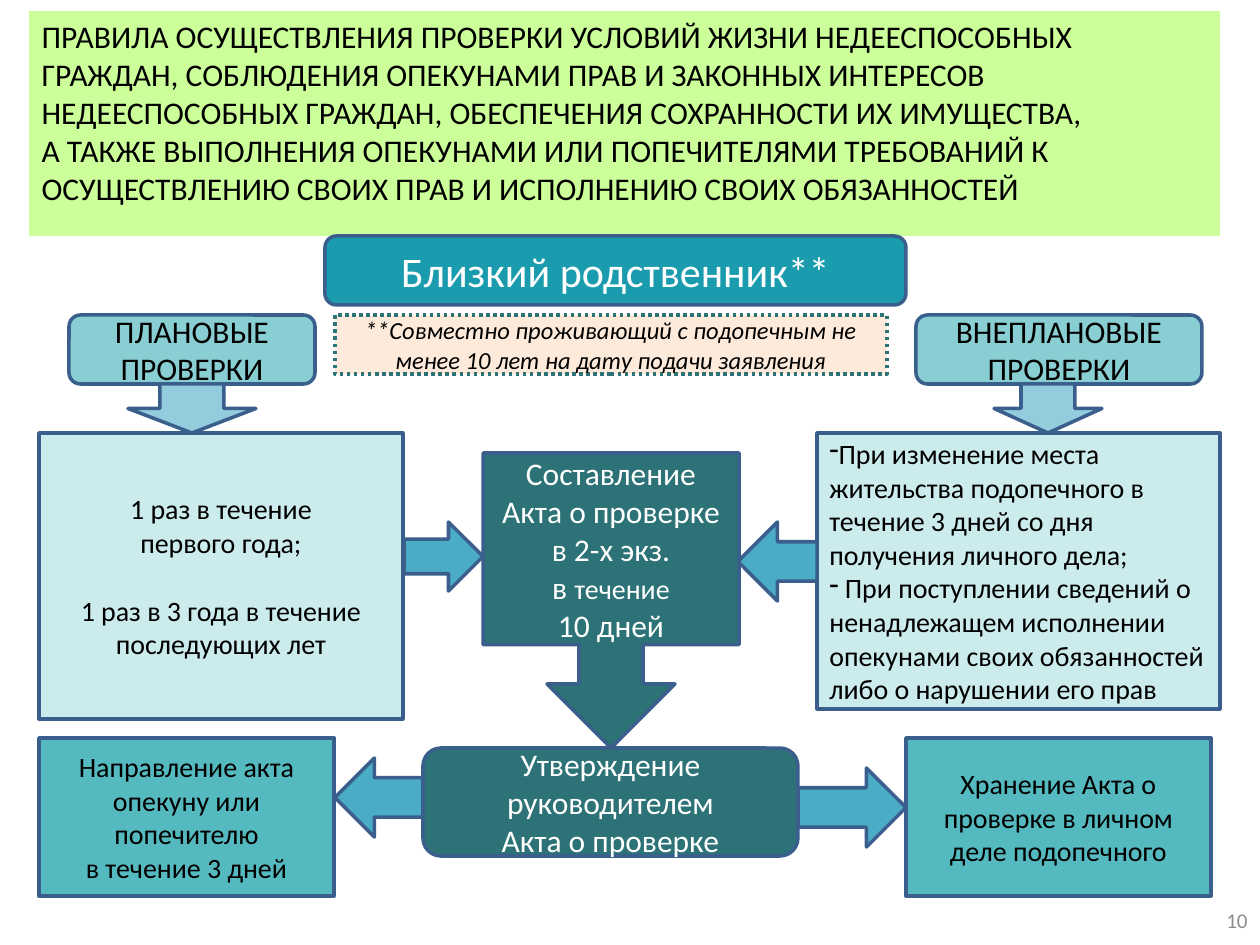
"""Build a flowchart slide on inspections of guardianship conditions."""
from lxml.etree import SubElement
from pptx import Presentation
from pptx.dml.color import RGBColor
from pptx.enum.dml import MSO_LINE_DASH_STYLE as Dash
from pptx.enum.shapes import MSO_SHAPE as Shape
from pptx.enum.text import MSO_ANCHOR as Anchor, MSO_AUTO_SIZE as AutoSize, PP_ALIGN as Align
from pptx.oxml import parse_xml
from pptx.oxml.ns import nsdecls, qn
from pptx.util import Emu, Pt

FONT = "Calibri"
BLACK, WHITE, GRAY = "000000", "FFFFFF", "8C8C8C"
BORDER, DARK, MEDIUM, PALE = "3A5F8C", "2C7276", "55BABF", "CCEBEC"
HEADING, FLOW, LIGHT_FLOW = "88CED2", "4BACC6", "93CDDD"

TITLE = (
    "ПРАВИЛА ОСУЩЕСТВЛЕНИЯ ПРОВЕРКИ УСЛОВИЙ ЖИЗНИ НЕДЕЕСПОСОБНЫХ\n"
    "ГРАЖДАН, СОБЛЮДЕНИЯ ОПЕКУНАМИ ПРАВ И ЗАКОННЫХ ИНТЕРЕСОВ "
    "НЕДЕЕСПОСОБНЫХ ГРАЖДАН, ОБЕСПЕЧЕНИЯ СОХРАННОСТИ ИХ ИМУЩЕСТВА,\n"
    "А ТАКЖЕ ВЫПОЛНЕНИЯ ОПЕКУНАМИ ИЛИ ПОПЕЧИТЕЛЯМИ ТРЕБОВАНИЙ К "
    "ОСУЩЕСТВЛЕНИЮ СВОИХ ПРАВ И ИСПОЛНЕНИЮ СВОИХ ОБЯЗАННОСТЕЙ"
)
UNPLANNED = (
    "При изменение места жительства подопечного в течение 3 дней со дня "
    "получения личного дела;\n"
    " При поступлении сведений о ненадлежащем исполнении опекунами своих "
    "обязанностей либо о нарушении его прав"
)
BOXES = [
    (Shape.ROUNDED_RECTANGLE, (325, 236, 581, 69), "1A9CAE", "Близкий родственник**", 24, WHITE),
    (Shape.ROUNDED_RECTANGLE, (69, 315, 246, 69), HEADING, "ПЛАНОВЫЕ ПРОВЕРКИ", 18, BLACK),
    (Shape.ROUNDED_RECTANGLE, (916, 315, 286, 69), HEADING, "ВНЕПЛАНОВЫЕ ПРОВЕРКИ", 18, BLACK),
    (Shape.ROUNDED_RECTANGLE, (423, 748, 375, 108), DARK,
     "Утверждение руководителем\nАкта о проверке", 18, WHITE),
    (Shape.RECTANGLE, (39, 738, 295, 158), MEDIUM,
     "Направление акта опекуну или попечителю\nв течение 3 дней", 16, BLACK),
    (Shape.RECTANGLE, (906, 738, 305, 158), MEDIUM,
     "Хранение Акта о проверке в личном деле подопечного", 16, BLACK),
]
ARROWS = [
    (Shape.DOWN_ARROW, (128, 384, 128, 49), LIGHT_FLOW),
    (Shape.DOWN_ARROW, (994, 384, 108, 49), LIGHT_FLOW),
    (Shape.LEFT_ARROW, (738, 522, 79, 79), FLOW),
    (Shape.RIGHT_ARROW, (404, 522, 79, 69), FLOW),
    (Shape.RIGHT_ARROW, (798, 768, 108, 79), FLOW),
    (Shape.LEFT_ARROW, (335, 758, 88, 79), FLOW),
]


def px(length):
    """Convert pixels at 126 to the inch into EMU."""
    return Emu(round(length * 914400 / 126))


def paint(color_format, color):
    """Give a fill a solid hex colour."""
    color_format.solid()
    color_format.fore_color.rgb = RGBColor.from_string(color)


def write(shape, text, size, color, align=Align.CENTER, anchor=Anchor.MIDDLE):
    """Write paragraphs of one style into a shape."""
    frame = shape.text_frame
    frame.word_wrap = True
    frame.auto_size = AutoSize.NONE
    frame.vertical_anchor = anchor
    frame.text = text
    for paragraph in frame.paragraphs:
        paragraph.alignment = align
        font = paragraph.font
        font.name, font.size = FONT, Pt(size)
        font.color.rgb = RGBColor.from_string(color)
    return frame.paragraphs


def add_block(slide, kind, place, fill, border=BORDER):
    """Add an outlined preset shape without a shadow."""
    shape = slide.shapes.add_shape(kind, *map(px, place))
    shape.shadow.inherit = False
    paint(shape.fill, fill)
    paint(shape.line.fill, border)
    shape.line.width = Pt(2)
    return shape


def add_title(slide):
    """Turn the title placeholder into a rounded green panel."""
    title = slide.shapes.title
    title.left, title.top, title.width, title.height = map(px, (29, 11, 1191, 225))
    title.element.spPr.insert(1, parse_xml(
        f'<a:prstGeom {nsdecls("a")} prst="roundRect"><a:avLst>'
        '<a:gd name="adj" fmla="val 26000"/></a:avLst></a:prstGeom>'))
    paint(title.fill, "CCFF99")
    write(title, TITLE, 18, BLACK, Align.LEFT, Anchor.TOP)


def add_note(slide):
    """Add the dotted footnote about close relatives."""
    note = add_block(slide, Shape.RECTANGLE, (335, 315, 552, 59), "FDEADA", DARK)
    note.line.dash_style = Dash.ROUND_DOT
    text = "**Совместно проживающий с подопечным не менее 10 лет на дату подачи заявления"
    write(note, text, 14, BLACK)[0].font.italic = True


def add_schedules(slide):
    """Add the planned and unplanned inspection panels."""
    unplanned = add_block(slide, Shape.RECTANGLE, (817, 433, 403, 276), PALE)
    for paragraph in write(unplanned, UNPLANNED, 16, BLACK, Align.LEFT):
        properties = paragraph._p.get_or_add_pPr()
        bullet = SubElement(properties, qn("a:buChar"))
        bullet.set("char", "-")
        properties.insert(0, bullet)
    planned = add_block(slide, Shape.RECTANGLE, (39, 433, 364, 286), PALE)
    text = "1 раз в течение\nпервого года;\n1 раз в 3 года в течение последующих лет"
    write(planned, text, 16, BLACK)[-1].space_before = Pt(19.5)


def add_report(slide):
    """Add the callout on drawing up the inspection report."""
    callout = add_block(slide, Shape.DOWN_ARROW_CALLOUT, (483, 453, 256, 295), DARK)
    text = "Составление\vАкта о проверке\vв 2-х экз.\nв \n10 дней"
    deadline = write(callout, text, 18, WHITE)[1]
    run = deadline.add_run()
    run.text = "течение"
    run.font.size = Pt(16)


def add_page_number(slide):
    """Add the page number in the bottom corner."""
    box = slide.shapes.add_textbox(*map(px, (966, 895, 294, 50)))
    write(box, "10", 12, GRAY, Align.RIGHT)


def main():
    """Build and save the slide."""
    presentation = Presentation()
    presentation.slide_width, presentation.slide_height = px(1260), px(945)
    slide = presentation.slides.add_slide(presentation.slide_layouts[5])
    add_note(slide)
    add_title(slide)
    for kind, place, fill, text, size, color in BOXES:
        write(add_block(slide, kind, place, fill), text, size, color)
    add_schedules(slide)
    for kind, place, fill in ARROWS:
        add_block(slide, kind, place, fill)
    add_report(slide)
    add_page_number(slide)
    presentation.save("out.pptx")


if __name__ == "__main__":
    main()
